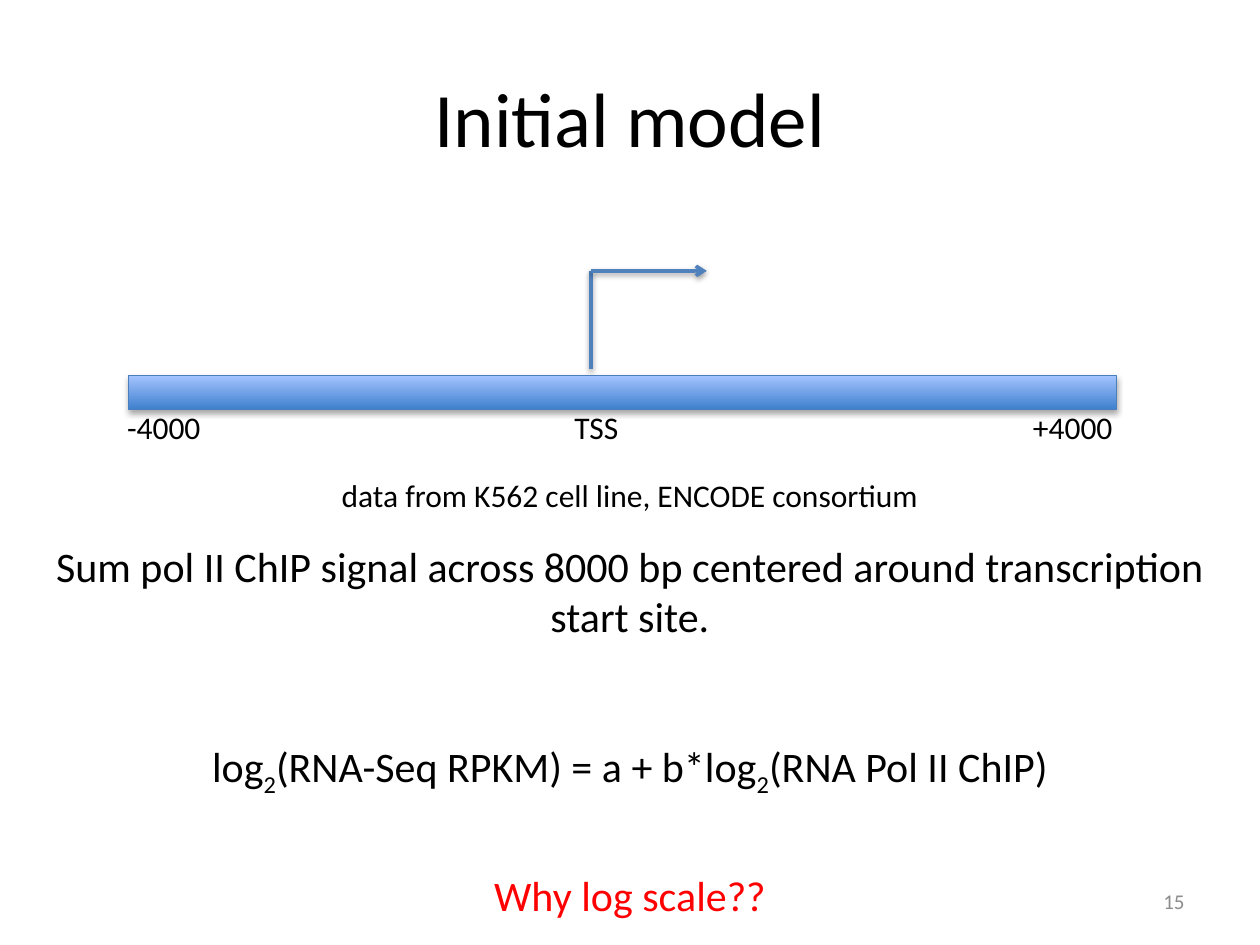
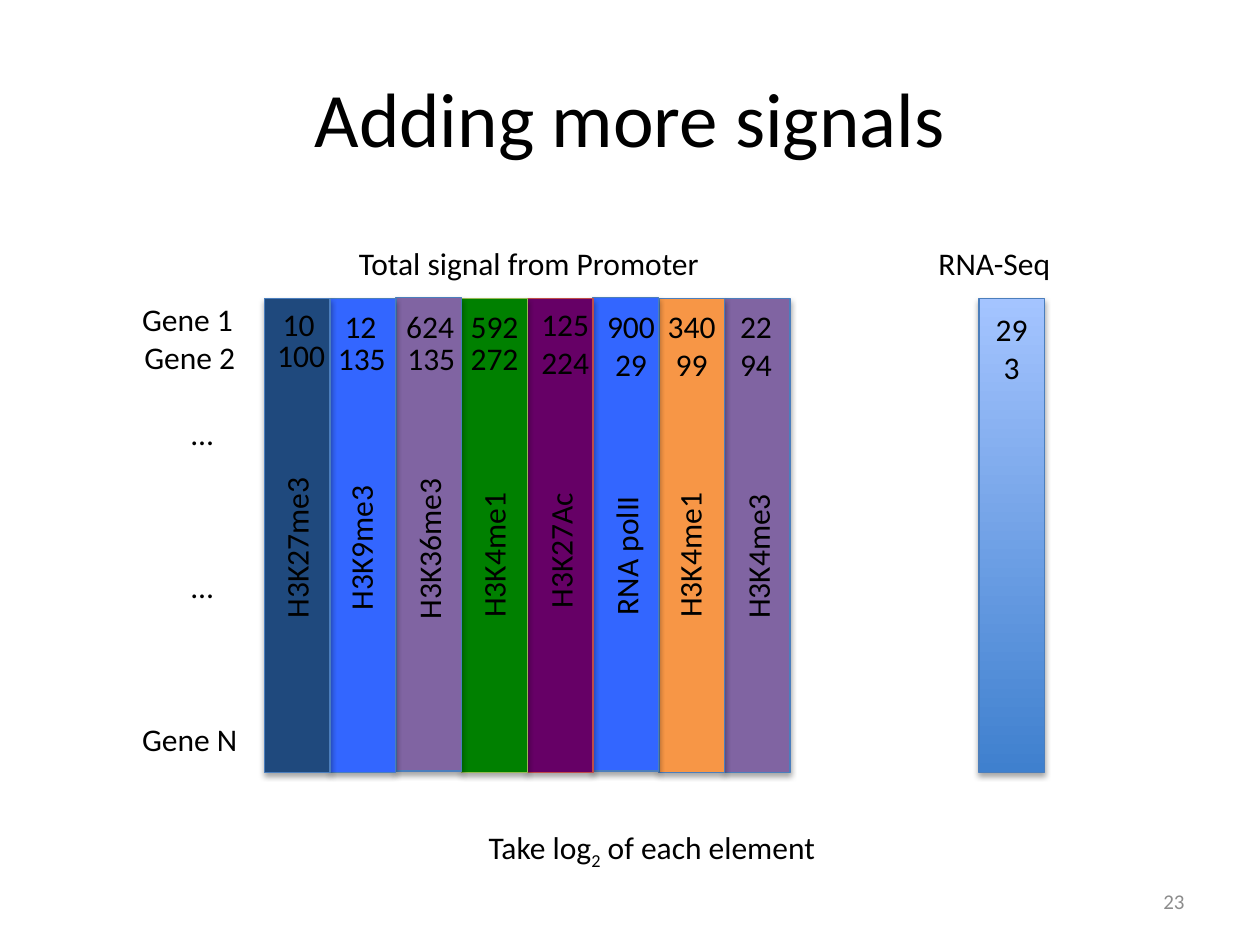
from lxml.etree import SubElement
from pptx import Presentation
from pptx.dml.color import RGBColor as RGB
from pptx.enum.shapes import MSO_CONNECTOR as LINK, MSO_SHAPE as SHAPE
from pptx.enum.text import MSO_ANCHOR as ANCHOR, MSO_AUTO_SIZE as AUTO, PP_ALIGN as ALIGN
from pptx.oxml.ns import qn
from pptx.util import Pt

PX = 9144
WIDE, HIGH = 1000, 750
FONT = "Calibri"
BLACK = RGB(0, 0, 0)
RED = RGB(0xFF, 0, 0)
GREY = RGB(0x8C, 0x8C, 0x8C)
STEEL = RGB(0x4F, 0x81, 0xBD)
EDGE = RGB(0x4B, 0x7E, 0xBC)
RUST = RGB(0xBF, 0x4C, 0x48)
LIME = RGB(0x98, 0xB9, 0x55)
DEEP = RGB(0x3F, 0x80, 0xCE)
PALE = RGB(0xA4, 0xC4, 0xFF)
NAVY = RGB(0x1F, 0x49, 0x7D)
BLUE = RGB(0x33, 0x66, 0xFF)
MAUVE = RGB(0x80, 0x64, 0xA2)
GREEN = RGB(0, 0x80, 0)
PLUM = RGB(0x66, 0, 0x66)
AMBER = RGB(0xF7, 0x96, 0x46)
LEFT, MID, RIGHT = ALIGN.LEFT, ALIGN.CENTER, ALIGN.RIGHT

TICKS = [("TSS", 446, 56), ("-4000", 91, 79), ("+4000", 810, 84)]
NOTES = [
    ("log_2_(RNA-Seq RPKM) = a + b*log_2_(RNA Pol II ChIP)", 583, 77, BLACK),
    ("Sum pol II ChIP signal across 8000 bp centered around "
     "transcription start site.", 424, 131, BLACK),
    ("Why log scale??", 685, 50, RED),
]
SOURCE = "data from K562 cell line, ENCODE consortium"

# fmt: off
BARS = [
    (NAVY, EDGE, 237, ("H3K27me3", 133, -1, 434), [("10", 1, 237), ("100", 3, 262)]),
    (BLUE, EDGE, 237, ("H3K9me3", 120, -2, 434), [("12", -2, 239), ("135", -1, 264)]),
    (MAUVE, EDGE, 236, ("H3K36me3", 133, 0, 435), [("624", 1, 239), ("135", 2, 264)]),
    (GREEN, LIME, 237, ("H3K4me1", 120, -1, 440), [("592", 0, 239), ("272", 0, 264)]),
    (PLUM, RUST, 237, ("H3K27Ac", 113, 0, 436), [("125\n224", 4, 237)]),
    (BLUE, EDGE, 236, ("RNA polII", 116, 0, 440), [("900\n29", 4, 239)]),
    (AMBER, EDGE, 237, ("H3K4me1", 120, -2, 440), [("340\n99", 0, 239)]),
    (MAUVE, EDGE, 237, ("H3K4me3", 120, 0, 441), [("22\n94", -1, 239)]),
]
# fmt: on
START, PITCH, BAR, TALL = 210, 52.15, 52, 376
GENES = [("Gene 1", LEFT, 0, 0), ("Gene 2", MID, 0, 0), ("…", MID, 1, 20),
         ("…", MID, 3, 20), ("Gene N", MID, 3, 0)]
ROW = 22
HEADS = [("Total signal from Promoter", 275, 189, 296), ("RNA-Seq", 735, 189, 110),
         ("Take log_2_ of each element", 378, 652, 290)]


def emu(*nums):
    return [round(n * PX) for n in nums]


def write(page, text, x, y, w, h=40, size=18, align=LEFT, color=BLACK, wrap=False, turn=0):
    box = page.shapes.add_textbox(*emu(x, y, w, h))
    box.rotation = turn
    frame = box.text_frame
    frame.word_wrap = wrap
    frame.auto_size = AUTO.NONE if wrap else AUTO.SHAPE_TO_FIT_TEXT
    for i, line in enumerate(text.split("\n")):
        para = frame.add_paragraph() if i else frame.paragraphs[0]
        para.alignment = align
        for j, part in enumerate(line.split("_")):
            run = para.add_run()
            run.text = part
            font = run.font
            font.name, font.size = FONT, Pt(size)
            font.color.rgb = color
            if j % 2:
                font._element.set("baseline", "-25000")
    return frame


def shade(props, dist, alpha):
    glow = props.find(qn("a:effectLst"))
    if glow is None:
        glow = SubElement(props, qn("a:effectLst"))
    drop = SubElement(glow, qn("a:outerShdw"), blurRad="40000", dist=str(dist),
                      dir="5400000", rotWithShape="0")
    tint = SubElement(drop, qn("a:srgbClr"), val="000000")
    SubElement(tint, qn("a:alpha"), val=str(alpha * 1000))


def block(page, x, y, w, h, color=None, edge=EDGE):
    rect = page.shapes.add_shape(SHAPE.RECTANGLE, *emu(x, y, w, h))
    rect.shadow.inherit = False
    if color is None:
        rect.fill.gradient()
        rect.fill.gradient_angle = 90
        for stop, tone in zip(rect.fill.gradient_stops, (DEEP, PALE)):
            stop.color.rgb = tone
    else:
        rect.fill.solid()
        rect.fill.fore_color.rgb = color
    rect.line.color.rgb = edge
    rect.line.width = Pt(0.75)
    shade(rect._element.spPr, 23000, 35)


def link(page, *ends, tip=False):
    line = page.shapes.add_connector(LINK.STRAIGHT, *emu(*ends))
    line.line.color.rgb = STEEL
    line.line.width = Pt(2)
    props = line._element.spPr
    if tip:
        SubElement(props.find(qn("a:ln")), qn("a:tailEnd"), type="arrow")
    shade(props, 20000, 38)


def start(deck, title, num):
    page = deck.slides.add_slide(deck.slide_layouts[6])
    for frame in (
        write(page, title, 50, 30, 900, 125, 44, MID, wrap=True),
        write(page, num, 717, 695, 233, 40, 12, RIGHT, GREY, True),
    ):
        frame.vertical_anchor = ANCHOR.MIDDLE
    return page


def model(deck):
    page = start(deck, "Initial model", "15")
    link(page, 469, 293, 469, 215)
    link(page, 469, 215, 561, 215, tip=True)
    block(page, 102, 298, 784, 27)
    for text, x, w in TICKS:
        write(page, text, x, 319, w)
    for text, y, h, color in NOTES:
        write(page, text, 0, y, WIDE, h, 24, MID, color, True)
    write(page, SOURCE, 258, 373, 484, align=MID)


def signals(deck):
    page = start(deck, "Adding more signals", "23")
    block(page, 777, 237, BAR, TALL)
    for text, x, y, w in HEADS:
        write(page, text, x, y, w)
    spots = [START + i * PITCH for i in range(len(BARS))]
    for x, (color, edge, y, *rest) in reversed(list(zip(spots, BARS))):
        block(page, x, y, BAR, TALL, color, edge)
    frame = write(page, "\n".join(g[0] for g in GENES), 103, 233, 97, 374)
    for para, (text, align, gap, dent) in zip(frame.paragraphs, GENES):
        para.alignment = align
        if gap:
            para.space_before = Pt(gap * ROW)
        if dent:
            para._p.get_or_add_pPr().set("marL", str(dent * PX))
    for x, (color, edge, top, name, cells) in zip(spots, BARS):
        mid = x + BAR / 2
        text, w, dx, y = name
        write(page, text, mid + dx - w / 2, y - 20, w, turn=270)
        for text, dx, y in cells:
            lines = text.split("\n")
            w = 20 + 13 * len(lines[0])
            write(page, text, mid + dx - w / 2, y, w, 9 + 31 * len(lines), align=MID)
    write(page, "29\n3", 780, 241, 46, 71, align=MID)


def main():
    deck = Presentation()
    deck.slide_width, deck.slide_height = emu(WIDE, HIGH)
    model(deck)
    signals(deck)
    deck.save("out.pptx")


if __name__ == "__main__":
    main()
